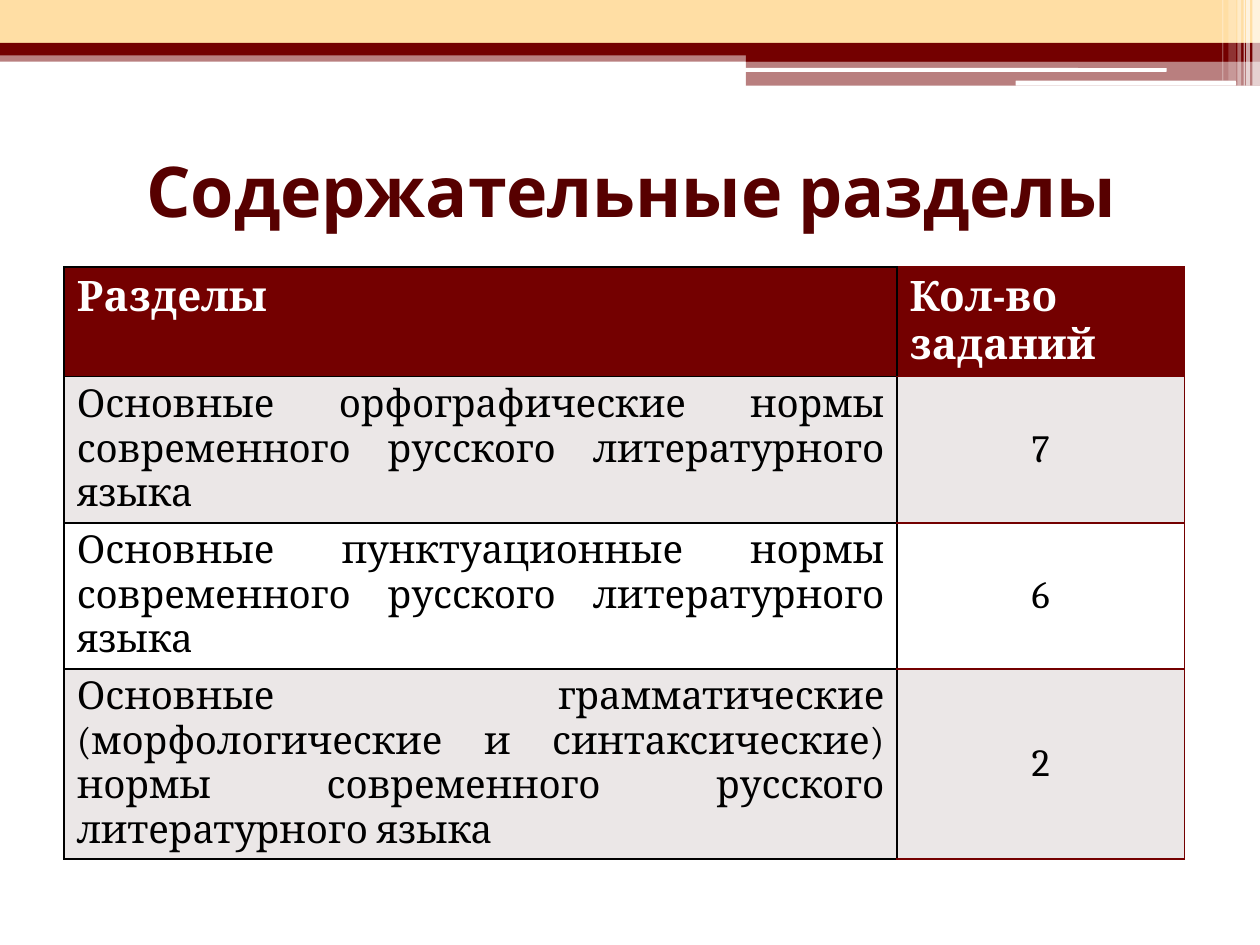
import lxml.etree
import pptx
import pptx.dml.color
import pptx.enum.shapes
import pptx.enum.text
import pptx.oxml.ns
import pptx.util

Inches = pptx.util.Inches
RGBColor = pptx.dml.color.RGBColor
MSO_SHAPE = pptx.enum.shapes.MSO_SHAPE
MSO_ANCHOR = pptx.enum.text.MSO_ANCHOR
PP_ALIGN = pptx.enum.text.PP_ALIGN
qn = pptx.oxml.ns.qn

MAROON = RGBColor(0x74, 0x00, 0x00)
DARK_MAROON = RGBColor(0x57, 0x00, 0x00)
CREAM = RGBColor(0xFF, 0xDE, 0xA4)
BAND = RGBColor(0xEB, 0xE7, 0xE7)
WHITE = RGBColor(0xFF, 0xFF, 0xFF)
BLACK = RGBColor(0x00, 0x00, 0x00)

BARS = [
    ((0, 0.4, 10, 0.09), MAROON, 50),
    ((0, 0, 10, 0.34), CREAM, 100),
    ((0, 0.34, 10, 0.1), MAROON, 100),
    ((5.92, 0.39, 4.08, 0.1), MAROON, 100),
    ((5.92, 0.48, 4.08, 0.2), MAROON, 50),
]
ROUNDED_BARS = [(5.91, 0.54, 3.35, 0.03), (8.06, 0.64, 1.75, 0.04)]
STRIPES = [
    (9.94, 0.06, 0.68, 65),
    (9.89, 0.03, 0.68, 65),
    (9.87, 0.01, 0.68, 60),
    (9.82, 0.03, 0.68, 40),
    (9.75, 0.06, 0.64, 20),
    (9.7, 0.01, 0.64, 30),
]
ROWS = [
    ("Разделы", "Кол-во\nзаданий"),
    ("Основные орфографические нормы современного русского литературного языка", "7"),
    ("Основные пунктуационные нормы современного русского литературного языка", "6"),
    ("Основные грамматические (морфологические и синтаксические) нормы "
     "современного русского литературного языка", "2"),
]
COL_WIDTHS = [6.61, 2.28]
ROW_HEIGHTS = [0.87, 1.16, 1.16, 1.51]

HEADER_FONT = {"name": "Cambria", "size": pptx.util.Pt(24), "bold": True}
BODY_FONT = {"name": "Cambria", "size": pptx.util.Pt(22), "bold": False}
TITLE_FONT = {"name": "Cabin", "size": pptx.util.Pt(40), "bold": True}


def format_text(tf, font, color, align):
    for p in tf.paragraphs:
        p.alignment = align
        for r in p.runs:
            for key, value in font.items():
                setattr(r.font, key, value)
            r.font.color.rgb = color


def add_bar(shapes, box, color, opacity=100, kind=MSO_SHAPE.RECTANGLE):
    s = shapes.add_shape(kind, *map(Inches, box))
    s.shadow.inherit = False
    s.fill.solid()
    s.fill.fore_color.rgb = color
    s.line.fill.background()
    if opacity < 100:
        clr = s._element.spPr.find(qn("a:solidFill")).find(qn("a:srgbClr"))
        lxml.etree.SubElement(clr, qn("a:alpha"), val=str(opacity * 1000))


def add_decoration(shapes):
    for box, color, opacity in BARS:
        add_bar(shapes, box, color, opacity)
    for box in ROUNDED_BARS:
        add_bar(shapes, box, WHITE, kind=MSO_SHAPE.ROUNDED_RECTANGLE)
    for left, width, height, opacity in STRIPES:
        add_bar(shapes, (left, 0, width, height), WHITE, opacity)


def set_title(s, text):
    s.left, s.top, s.width, s.height = map(Inches, (0.51, 0.92, 9, 1.17))
    tf = s.text_frame
    tf.text = text
    tf.auto_size = pptx.enum.text.MSO_AUTO_SIZE.NONE
    tf.vertical_anchor = MSO_ANCHOR.MIDDLE
    format_text(tf, TITLE_FONT, DARK_MAROON, PP_ALIGN.CENTER)


def set_borders(cell, colors):
    tcPr = cell._tc.get_or_add_tcPr()
    for i, (side, color) in enumerate(colors.items()):
        ln = lxml.etree.Element(qn("a:ln" + side), w=str(pptx.util.Pt(1)))
        fill = lxml.etree.SubElement(ln, qn("a:solidFill"))
        lxml.etree.SubElement(fill, qn("a:srgbClr"), val=str(color))
        tcPr.insert(i, ln)


def format_cell(cell, text, row, col):
    header = row == 0
    cell.text = text
    cell.fill.solid()
    cell.fill.fore_color.rgb = MAROON if header else BAND if row % 2 else WHITE
    if header:
        align = PP_ALIGN.LEFT
    else:
        align = PP_ALIGN.CENTER if col else PP_ALIGN.JUSTIFY
    cell.vertical_anchor = MSO_ANCHOR.MIDDLE if col and not header else MSO_ANCHOR.TOP
    format_text(cell.text_frame, HEADER_FONT if header else BODY_FONT,
                WHITE if header else BLACK, align)
    edge = MAROON if col else BLACK
    set_borders(cell, {"L": BLACK, "R": edge, "T": edge, "B": edge})


def add_sections_table(shapes):
    box = (0.51, 2.12, sum(COL_WIDTHS), sum(ROW_HEIGHTS))
    table = shapes.add_table(len(ROWS), len(COL_WIDTHS), *map(Inches, box)).table
    table.horz_banding = False
    for column, width in zip(table.columns, COL_WIDTHS):
        column.width = Inches(width)
    for i, (texts, height) in enumerate(zip(ROWS, ROW_HEIGHTS)):
        table.rows[i].height = Inches(height)
        for j, text in enumerate(texts):
            format_cell(table.cell(i, j), text, i, j)


def main():
    prs = pptx.Presentation()
    prs.slide_width, prs.slide_height = Inches(10), Inches(7.5)
    slide = prs.slides.add_slide(prs.slide_layouts[5])
    add_decoration(slide.shapes)
    set_title(slide.shapes.title, "Содержательные разделы")
    add_sections_table(slide.shapes)
    prs.save("out.pptx")


if __name__ == "__main__":
    main()
